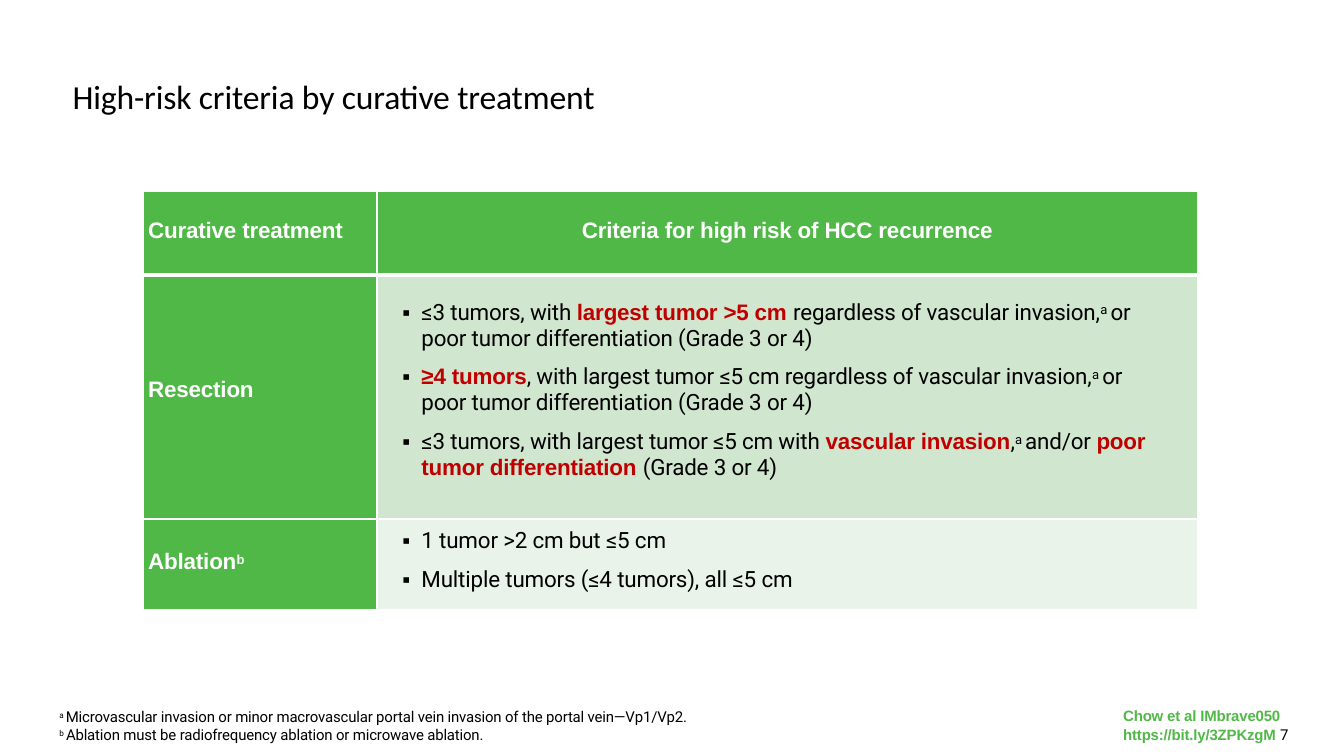
from dataclasses import dataclass

from lxml import etree
from pptx import Presentation
from pptx.dml.color import RGBColor
from pptx.enum.text import MSO_ANCHOR, PP_ALIGN
from pptx.oxml.ns import qn
from pptx.util import Inches, Pt

TOP, MIDDLE = MSO_ANCHOR.TOP, MSO_ANCHOR.MIDDLE
LEFT, CENTER = PP_ALIGN.LEFT, PP_ALIGN.CENTER


@dataclass(frozen=True)
class Theme:
    """Colours and type sizes of the slide."""
    black: str = "000000"
    white: str = "FFFFFF"
    green: str = "50B847"
    light: str = "D0E6CF"
    pale: str = "E9F3E9"
    red: str = "C00000"
    title: float = 24
    body: float = 16
    note: float = 10.7
    mark: float = 10


THEME = Theme()


def style(name, size, color, bold=False, raised=0):
    """Return the format values of one kind of text."""
    font = {"name": name, "size": Pt(size), "bold": bold}
    return {"font": font, "color": color, "raised": raised}


STYLES = {
    "title": style("Calibri", THEME.title, THEME.black),
    "label": style("Arial", THEME.body, THEME.white, True),
    "label mark": style("Arial", THEME.body, THEME.white, True, 24),
    "plain": style("Roboto", THEME.body, THEME.black),
    "mark": style("Roboto", THEME.body, THEME.black, False, 24),
    "key": style("Arial", THEME.body, THEME.red, True),
    "note": style("Roboto", THEME.note, THEME.black),
    "note mark": style("Roboto", THEME.mark, THEME.black, False, 28),
    "source": style("Arial", THEME.note, THEME.green, True),
}

RESECTION = [
    [("≤3 tumors, with ", "plain"), ("largest tumor >5 cm ", "key"),
     ("regardless of vascular invasion,", "plain"), ("a ", "mark"),
     ("or poor tumor differentiation (Grade 3 or 4)", "plain")],
    [("≥4 tumors", "key"),
     (", with largest tumor ≤5 cm regardless of vascular invasion,", "plain"),
     ("a ", "mark"), ("or poor tumor differentiation (Grade 3 or 4)", "plain")],
    [("≤3 tumors, with largest tumor ≤5 cm with ", "plain"),
     ("vascular invasion", "key"), (",", "plain"), ("a ", "mark"),
     ("and/or ", "plain"), ("poor tumor differentiation ", "key"),
     ("(Grade 3 or 4)", "plain")],
]
ABLATION = [
    [("1 tumor >2 cm but ≤5 cm", "plain")],
    [("Multiple tumors (≤4 tumors), all ≤5 cm", "plain")],
]
FOOTNOTES = [
    [("a ", "note mark"),
     ("Microvascular invasion or minor macrovascular portal vein invasion "
      "of the portal vein—Vp1/Vp2.", "note")],
    [("b ", "note mark"),
     ("Ablation must be radiofrequency ablation or microwave ablation.", "note")],
]


def add_span(para, text, kind):
    """Add one formatted run of text."""
    span = para.add_run()
    span.text = text
    look = STYLES[kind]
    for name, value in look["font"].items():
        setattr(span.font, name, value)
    span.font.color.rgb = RGBColor.from_string(look["color"])
    properties = span.font._element
    if look["raised"]:
        properties.set("baseline", str(look["raised"] * 1000))
    else:
        properties.set("spc", "-10")


def add_bullet(para):
    """Give a paragraph a black square bullet and a hanging indent."""
    properties = para._p.get_or_add_pPr()
    properties.set("marL", str(Inches(0.44)))
    properties.set("indent", str(Inches(-0.19)))
    color = etree.SubElement(properties, qn("a:buClr"))
    etree.SubElement(color, qn("a:srgbClr"), val=THEME.black)
    etree.SubElement(properties, qn("a:buFont"), typeface="Arial")
    etree.SubElement(properties, qn("a:buChar"), char="▪")


def fill_text(frame, lines, align=LEFT, bullets=False, gap=0):
    """Write paragraphs made of (text, kind) spans."""
    for index, line in enumerate(lines):
        para = frame.add_paragraph() if index else frame.paragraphs[0]
        if bullets:
            add_bullet(para)
        para.alignment = align
        if index and gap:
            para.space_before = Pt(gap)
        for text, kind in line:
            add_span(para, text, kind)


def add_text(page, box, lines, indent, anchor=TOP, spacing=1.0):
    """Place a text box at left, top, width and height."""
    frame = page.shapes.add_textbox(*map(Inches, box)).text_frame
    values = {"word_wrap": True, "vertical_anchor": anchor,
              "margin_left": Inches(indent), "margin_top": Inches(0.02),
              "margin_right": 0, "margin_bottom": 0}
    for name, value in values.items():
        setattr(frame, name, value)
    fill_text(frame, lines)
    for para in frame.paragraphs:
        para.line_spacing = spacing


def add_borders(cell, top, bottom):
    """Draw white borders of the given widths in points."""
    properties = cell._tc.get_or_add_tcPr()
    widths = {"a:lnL": 1, "a:lnR": 1, "a:lnT": top, "a:lnB": bottom}
    for tag, width in widths.items():
        line = etree.SubElement(properties, qn(tag), w=str(Pt(width)))
        paint = etree.SubElement(line, qn("a:solidFill"))
        etree.SubElement(paint, qn("a:srgbClr"), val=THEME.white)


def format_cell(cell, fill, anchor, margins, borders):
    """Set margins (left, top, right, bottom), borders and fill."""
    cell.vertical_anchor = anchor
    for side, value in zip(("left", "top", "right", "bottom"), margins):
        setattr(cell, f"margin_{side}", Inches(value))
    add_borders(cell, *borders)
    cell.fill.solid()
    cell.fill.fore_color.rgb = RGBColor.from_string(fill)


def add_criteria(page, box):
    """Place the table of criteria by treatment."""
    table = page.shapes.add_table(3, 2, *map(Inches, box)).table
    table.first_row = table.horz_banding = False
    for column, width in zip(table.columns, (2.32, box[2] - 2.32)):
        column.width = Inches(width)
    for row, height in zip(table.rows, (0.83, 2.42, 0.9)):
        row.height = Inches(height)

    borders = [(1, 3), (3, 1), (1, 1)]
    labels = [[("Curative treatment", "label")], [("Resection", "label")],
              [("Ablation", "label"), ("b", "label mark")]]
    for row, (label, bottom) in enumerate(zip(labels, (0.05, 0.14, 0.05))):
        cell = table.cell(row, 0)
        format_cell(cell, THEME.green, MIDDLE, (0.05, 0, 0, bottom), borders[row])
        fill_text(cell.text_frame, [label])

    heading = table.cell(0, 1)
    format_cell(heading, THEME.green, MIDDLE, (0, 0, 0, 0.05), borders[0])
    fill_text(heading.text_frame,
              [[("Criteria for high risk of HCC recurrence", "label")]], CENTER)

    groups = [(RESECTION, THEME.light, 0.24), (ABLATION, THEME.pale, 0.09)]
    for row, (lines, fill, top) in enumerate(groups, 1):
        cell = table.cell(row, 1)
        format_cell(cell, fill, TOP, (0, top, 0.4, 0), borders[row])
        fill_text(cell.text_frame, lines, bullets=True, gap=9)


def main():
    """Build and save the slide."""
    deck = Presentation()
    deck.slide_width, deck.slide_height = Inches(13.33), Inches(7.5)
    page = deck.slides.add_slide(deck.slide_layouts[6])
    add_text(page, (0.7, 0.76, 6.15, 0.42),
             [[("High-risk criteria by curative treatment", "title")]],
             0.02, MIDDLE, 0.9)
    add_text(page, (0.53, 7, 6.52, 0.38), FOOTNOTES, 0.06)
    add_criteria(page, (1.42, 1.9, 10.46, 4.15))
    add_text(page, (11.12, 6.99, 1.74, 0.37),
             [[("Chow et al IMbrave050 https://bit.ly/3ZPKzgM ", "source"),
               ("7", "note")]], 0.02, TOP, 1.02)
    deck.save("out.pptx")


if __name__ == "__main__":
    main()
